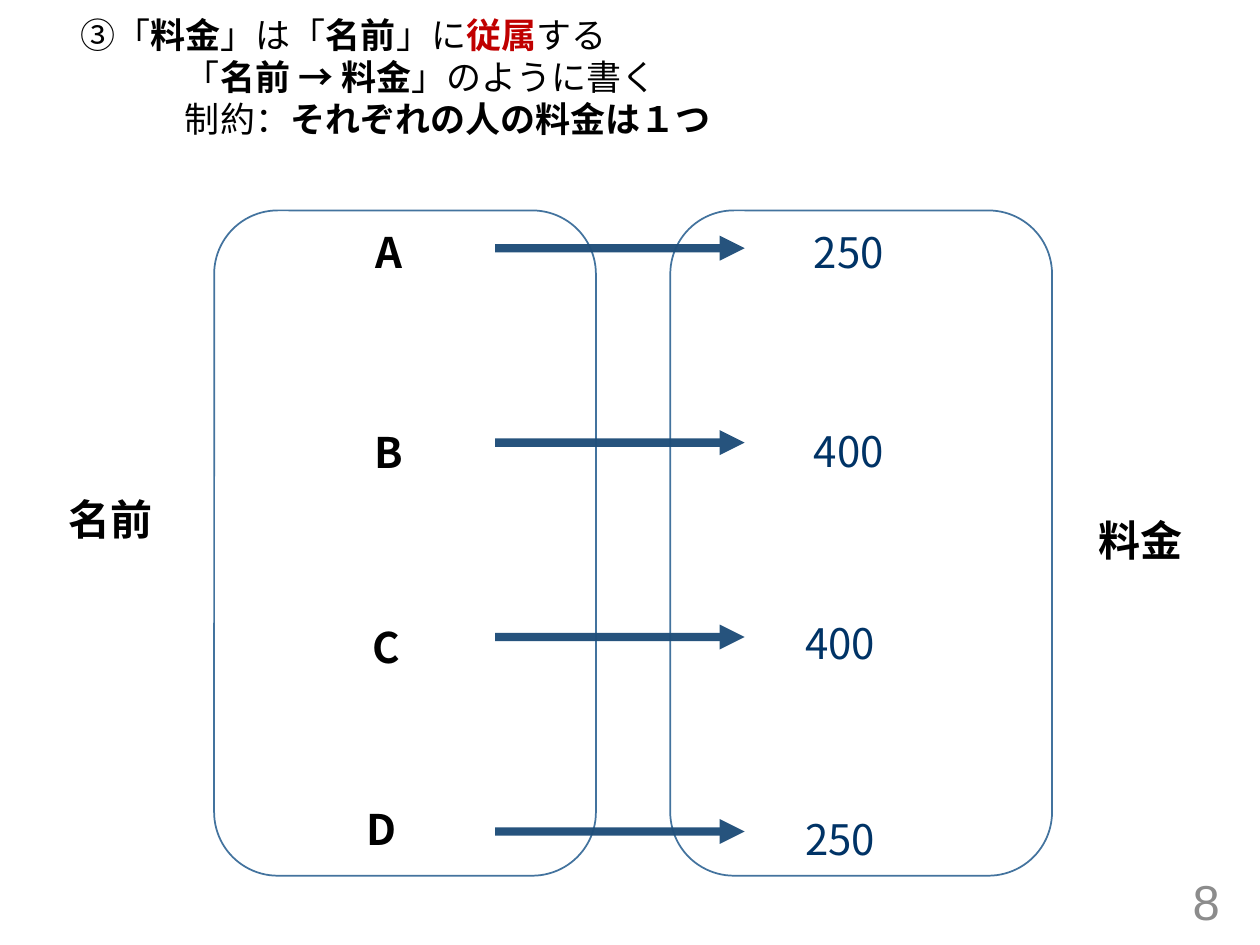
from lxml import etree
from pptx import Presentation
from pptx.dml.color import RGBColor
from pptx.enum import shapes, text
from pptx.oxml.ns import qn
from pptx.util import Inches, Pt

BLACK = RGBColor(0x00, 0x00, 0x00)
RED = RGBColor(0xC0, 0x00, 0x00)
NAVY = RGBColor(0x00, 0x33, 0x66)
GRAY = RGBColor(0x8C, 0x8C, 0x8C)
OUTLINE = RGBColor(0x43, 0x73, 0x9E)
ARROW = RGBColor(0x1F, 0x4E, 0x79)
FONT = "Noto Sans CJK JP"

BOLD = {"bold": True}
# Each heading line: left indent in inches, then runs of text and format
HEADING = [
    (0, [("③「", {}), ("料金", BOLD), ("」は「", {}), ("名前", BOLD), ("」に", {}),
         ("従属", {"bold": True, "color": RED}), ("する", {})]),
    (0.83, [("「", {}), ("名前 → 料金", BOLD), ("」のように書く", {})]),
    (0.83, [("制約：", {}), ("それぞれの人の料金は", BOLD),
            ("１つ", {"bold": True, "font": "Calibri"})]),
]
# Name and fee, each with its left and top
PAIRS = [
    (("A", 2.91, 1.8), ("250", 6.39, 1.8)),
    (("B", 2.9, 3.39), ("400", 6.39, 3.38)),
    (("C", 2.89, 4.94), ("400", 6.32, 4.91)),
    (("D", 2.84, 6.38), ("250", 6.32, 6.46)),
]
SET_LABELS = [("名前", 0.47, 3.92), ("料金", 8.65, 4.09)]
SET_LEFTS = [1.7, 5.32]
SET_TOP, SET_WIDTH, SET_HEIGHT = 1.67, 3.03, 5.28
ARROW_START, ARROW_END = 3.93, 5.91
ARROW_TOP, ARROW_STEP = 1.97, 1.543


def add_run(paragraph, words, size=24, color=BLACK, bold=False, font=FONT):
    run = paragraph.add_run()
    run.text = words
    run.font.size = Pt(size)
    run.font.bold = bold
    run.font.name = font
    run.font.color.rgb = color
    east_asian = etree.SubElement(run.font._element, qn("a:ea"))
    east_asian.set("typeface", FONT)


def add_box(slide, left, top, width, height, margins=(0.1, 0.05)):
    """Add an empty wrapping text box and return its text frame."""
    frame = slide.shapes.add_textbox(*map(Inches, (left, top, width, height))).text_frame
    frame.word_wrap = True
    frame.margin_left = frame.margin_right = Inches(margins[0])
    frame.margin_top = frame.margin_bottom = Inches(margins[1])
    return frame


def add_label(slide, words, left, top, width=1.32, height=0.6, **style):
    paragraph = add_box(slide, left, top, width, height, (0.07, 0.04)).paragraphs[0]
    paragraph.line_spacing = 0.9
    paragraph.space_before = Pt(10)
    add_run(paragraph, words, **style)


def add_heading(slide):
    frame = add_box(slide, 0.54, 0.06, 7.37, 1.11)
    for index, (indent, runs) in enumerate(HEADING):
        paragraph = frame.add_paragraph() if index else frame.paragraphs[0]
        paragraph._p.get_or_add_pPr().set("marL", str(Inches(indent)))
        for words, style in runs:
            add_run(paragraph, words, size=20, **style)


def add_set_outline(slide, left):
    outline = slide.shapes.add_shape(
        shapes.MSO_SHAPE.ROUNDED_RECTANGLE,
        *map(Inches, (left, SET_TOP, SET_WIDTH, SET_HEIGHT)))
    outline.shadow.inherit = False
    outline.fill.background()
    outline.line.color.rgb = OUTLINE
    outline.line.width = Pt(1)


def add_arrow(slide, top):
    arrow = slide.shapes.add_connector(
        shapes.MSO_CONNECTOR.STRAIGHT,
        *map(Inches, (ARROW_START, top, ARROW_END, top)))
    arrow.line.color.rgb = ARROW
    arrow.line.width = Pt(4.75)
    properties = arrow._element.spPr
    color = properties.find(".//" + qn("a:srgbClr"))
    etree.SubElement(color, qn("a:alpha")).set("val", "97000")
    line = properties.find(qn("a:ln"))
    etree.SubElement(line, qn("a:tailEnd")).set("type", "triangle")
    etree.SubElement(properties, qn("a:effectLst"))


def add_page_number(slide, number):
    frame = add_box(slide, 7.53, 6.95, 2.25, 0.4)
    frame.vertical_anchor = text.MSO_ANCHOR.MIDDLE
    paragraph = frame.paragraphs[0]
    paragraph.alignment = text.PP_ALIGN.RIGHT
    add_run(paragraph, number, size=28, color=GRAY, font="Arial")


def main():
    presentation = Presentation()
    presentation.slide_width, presentation.slide_height = Inches(10), Inches(7.5)
    slide = presentation.slides.add_slide(presentation.slide_layouts[6])

    add_heading(slide)
    for left in SET_LEFTS:
        add_set_outline(slide, left)
    for label in SET_LABELS:
        add_label(slide, *label, height=1.12, bold=True)
    for row, (name, fee) in enumerate(PAIRS):
        add_arrow(slide, ARROW_TOP + row * ARROW_STEP)
        add_label(slide, *name, height=1.12, bold=True)
        add_label(slide, *fee, width=2.16, color=NAVY)
    add_page_number(slide, "8")

    presentation.save("out.pptx")


if __name__ == "__main__":
    main()
